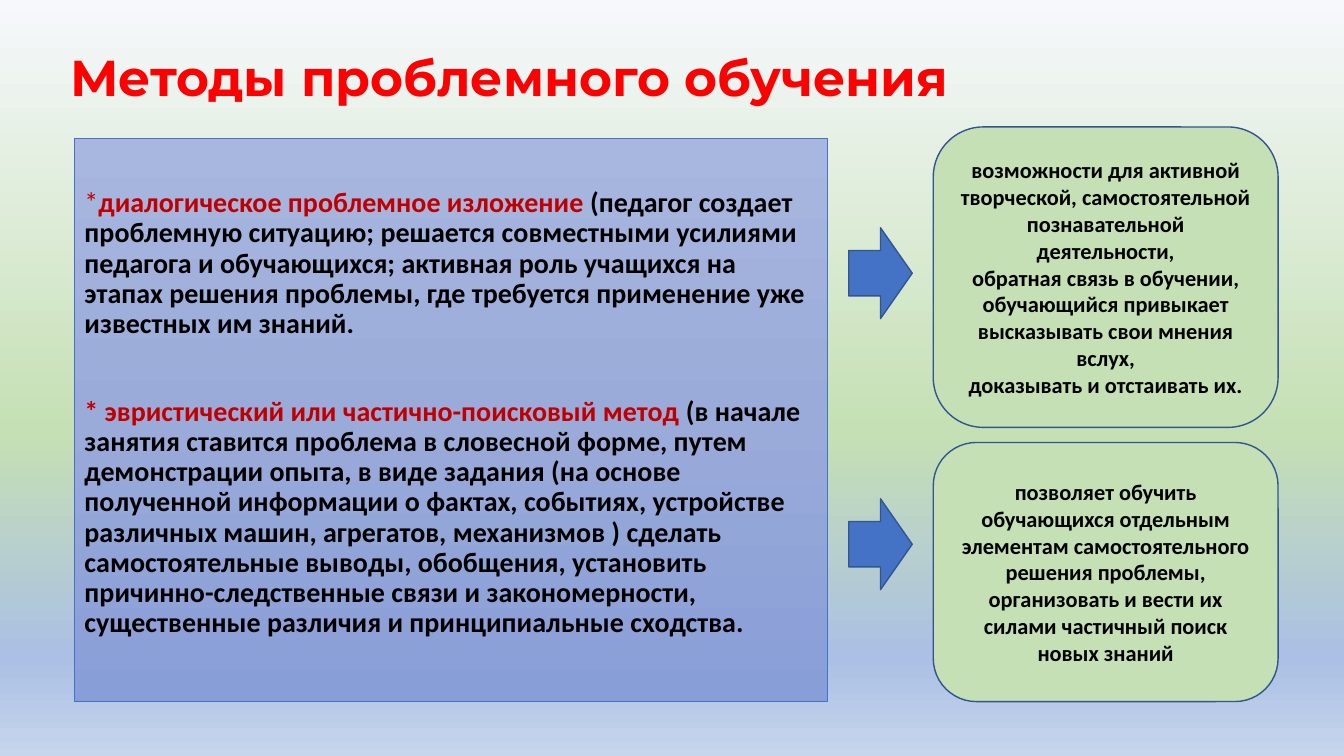
from lxml import etree
from pptx import Presentation
from pptx.dml.color import RGBColor
from pptx.enum.shapes import MSO_SHAPE
from pptx.enum.text import MSO_ANCHOR, PP_ALIGN
from pptx.oxml.ns import qn
from pptx.util import Cm, Pt

# Content
TITLE = "Методы проблемного обучения"
METHODS = [
    [("*", "accent", False),
     ("диалогическое проблемное изложение ", "accent", True),
     ("(педагог создает проблемную ситуацию; решается совместными усилиями "
      "педагога и обучающихся; активная роль учащихся на этапах решения проблемы, "
      "где требуется применение уже известных им знаний.", "text", True)],
    [("* эвристический или частично-поисковый метод", "accent", True),
     ("\u00a0(в начале занятия ставится проблема в словесной форме, путем "
      "демонстрации опыта, в виде задания (на основе полученной информации о "
      "фактах, событиях, устройстве различных машин, агрегатов, механизмов ) "
      "сделать самостоятельные выводы, обобщения, установить "
      "причинно-следственные связи и закономерности, существенные различия и "
      "принципиальные сходства.", "text", True)],
]
# Each result: top and height of its box, top of its arrow (cm), paragraphs
RESULTS = [
    (3.2, 7.57, 5.74,
     ["возможности для активной творческой, самостоятельной познавательной деятельности,",
      "обратная связь в обучении, обучающийся привыкает высказывать свои мнения вслух,",
      "доказывать и отстаивать их."]),
    (11.15, 6.53, 12.57,
     ["позволяет обучить обучающихся отдельным элементам самостоятельного решения "
      "проблемы, организовать и вести их силами частичный поиск новых знаний"]),
]
COLORS = {"title": "FF0000", "accent": "C00000", "text": "000000", "green": "C5E0B4",
          "blue": "4472C4", "outline": "325491"}
PAGE_STOPS = [(0, "F6F8FC"), (57, "C5E0B4"), (87, "ABC0E4"), (100, "C7D5ED")]
PANEL_STOPS = [(0, "A8B7DF"), (50, "9AABD9"), (100, "889ED7")]


def color(name):
    return RGBColor.from_string(COLORS[name])


def fill_gradient(fill, owner, stops):
    """Fill from top to bottom with the given (percent, hex) stops."""
    fill.gradient()
    fill.gradient_angle = 270
    stop_list = next(owner.iter(qn("a:gsLst")))
    for old_stop in list(stop_list):
        stop_list.remove(old_stop)
    for percent, value in stops:
        stop = etree.SubElement(stop_list, qn("a:gs"), pos=str(percent * 1000))
        etree.SubElement(stop, qn("a:srgbClr"), val=value)


def add_box(page, kind, left, top, width, height, fill, line, line_width):
    box = page.shapes.add_shape(kind, Cm(left), Cm(top), Cm(width), Cm(height))
    box.shadow.inherit = False
    if fill:
        box.fill.solid()
        box.fill.fore_color.rgb = color(fill)
    box.line.color.rgb = color(line)
    box.line.width = Pt(line_width)
    box.text_frame.word_wrap = True
    return box


def style(span, size, tint, bold=True, name="Calibri"):
    span.font.size = Pt(size)
    span.font.bold = bold
    span.font.name = name
    span.font.color.rgb = color(tint)


deck = Presentation()
deck.slide_width, deck.slide_height = Cm(33.87), Cm(19.05)
page = deck.slides.add_slide(deck.slide_layouts[6])
fill_gradient(page.background.fill, page.element, PAGE_STOPS)

# Title
heading = page.shapes.add_textbox(Cm(1.52), Cm(0.56), Cm(24.2), Cm(2.92)).text_frame
heading.word_wrap = True
heading.vertical_anchor = MSO_ANCHOR.MIDDLE
heading.text = TITLE
heading.paragraphs[0].line_spacing = 0.9
style(heading.paragraphs[0].runs[0], 36, "title", name="Montserrat")

# Methods panel
panel = add_box(page, MSO_SHAPE.RECTANGLE, 1.88, 3.48, 18.97, 14.2, None, "blue", 0.5)
fill_gradient(panel.fill, panel.element, PANEL_STOPS)
frame = panel.text_frame
frame.vertical_anchor = MSO_ANCHOR.TOP
frame.margin_top = Cm(1.27)
for index, method in enumerate(METHODS):
    para = frame.add_paragraph() if index else frame.paragraphs[0]
    para.alignment = PP_ALIGN.LEFT
    para.line_spacing = 0.9
    para.space_before = Pt(41 if index else 0)
    for words, tint, bold in method:
        span = para.add_run()
        span.text = words
        style(span, 20, tint, bold)

# Results with their arrows
for top, height, arrow_top, lines in RESULTS:
    box = add_box(page, MSO_SHAPE.ROUNDED_RECTANGLE, 23.52, top, 8.69, height,
                  "green", "outline", 1)
    box.text_frame.vertical_anchor = MSO_ANCHOR.MIDDLE
    box.text_frame.text = "\n".join(lines)
    for para in box.text_frame.paragraphs:
        para.alignment = PP_ALIGN.CENTER
        style(para.runs[0], 16, "text")
    add_box(page, MSO_SHAPE.RIGHT_ARROW, 21.39, arrow_top, 1.6, 2.29, "blue", "outline", 1)

deck.save("out.pptx")
